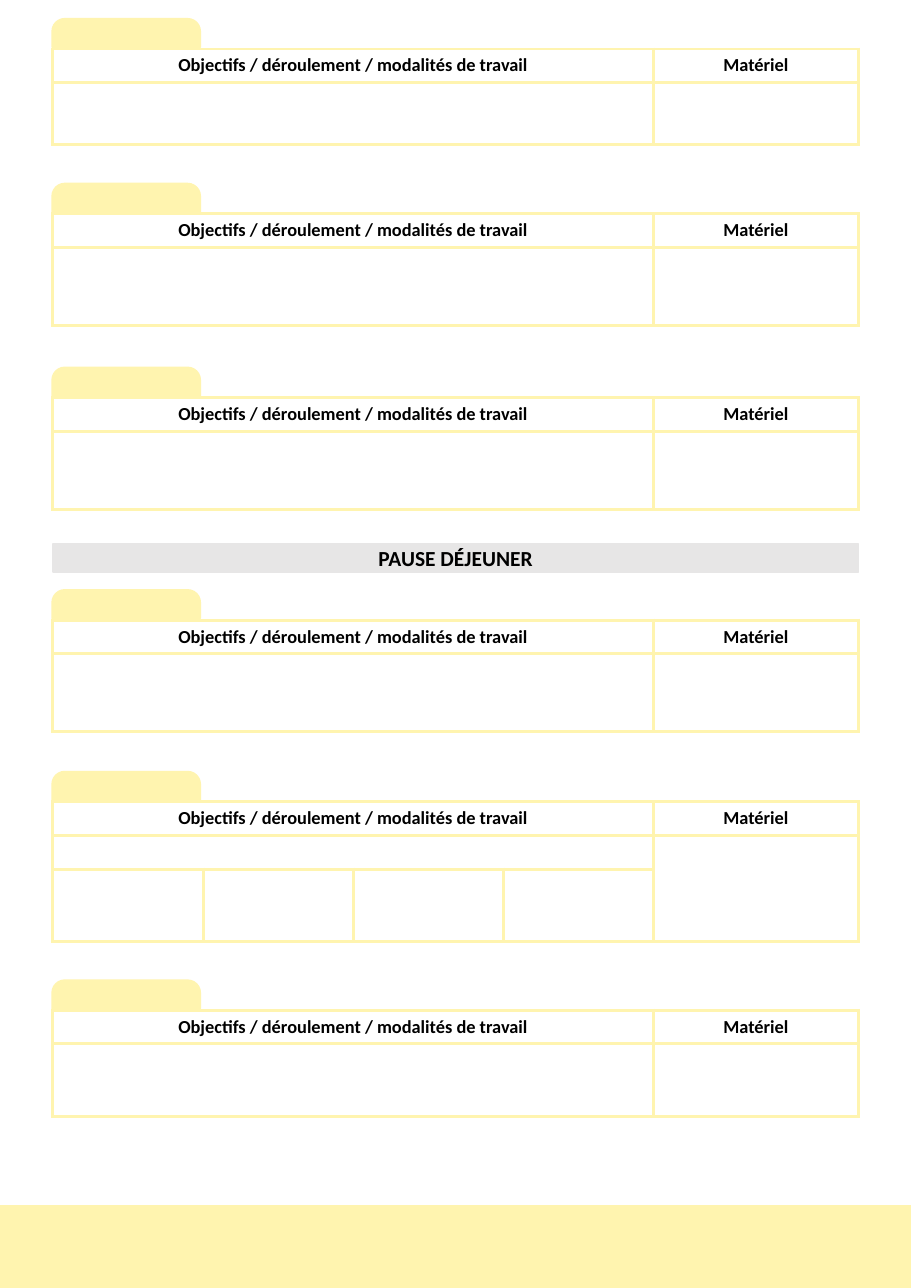
from lxml import etree
from pptx import Presentation
from pptx import util as u
from pptx.dml.color import RGBColor
from pptx.enum import shapes, text
from pptx.oxml.ns import qn

YELLOW, GREY, WHITE, BLACK = "FFF4AF", "E7E6E6", "FFFFFF", "000000"
LEFT, WIDE, SIDE = 1.22, 18.57, 4.73
HEAD = 0.77
TITLES = ("Objectifs / déroulement / modalités de travail", "Matériel")

# Top of each table, heights of its body rows, number of main columns
LESSONS = [
    (1.13, [1.44], 1),
    (4.93, [1.8], 1),
    (9.17, [1.8], 1),
    (14.3, [1.8], 1),
    (18.49, [0.78, 1.67], 4),
    (23.3, [1.68], 1),
]


def color(code):
    return RGBColor.from_string(code)


def write(frame, words, size):
    """Put one centred bold line into a text frame."""
    frame.vertical_anchor = text.MSO_ANCHOR.MIDDLE
    par = frame.paragraphs[0]
    par.alignment = text.PP_ALIGN.CENTER
    run = par.add_run()
    run.text = words
    style = {"name": "Calibri", "size": u.Pt(size), "bold": True}
    for key, value in style.items():
        setattr(run.font, key, value)
    run.font.color.rgb = color(BLACK)


def block(slide, kind, box, code, width):
    """Draw a flat shape whose fill and line share one colour."""
    shape = slide.shapes.add_shape(kind, *map(u.Cm, box))
    shape.shadow.inherit = False
    shape.fill.solid()
    shape.fill.fore_color.rgb = color(code)
    shape.line.color.rgb = color(code)
    shape.line.width = u.Pt(width)
    return shape


def frame_cell(cell):
    """Give a cell a white fill, yellow borders and small empty text."""
    cell.fill.solid()
    cell.fill.fore_color.rgb = color(WHITE)
    props = cell._tc.get_or_add_tcPr()
    for spot, side in enumerate(("lnL", "lnR", "lnT", "lnB")):
        line = etree.Element(qn("a:" + side), w=str(u.Pt(2.25)))
        fill = etree.SubElement(line, qn("a:solidFill"))
        etree.SubElement(fill, qn("a:srgbClr"), val=YELLOW)
        props.insert(spot, line)
    par = cell.text_frame.paragraphs[0]._p
    etree.SubElement(par, qn("a:endParaRPr"), sz="1200")


def lesson(slide, left, top, wide, body, parts):
    """Place a tab and, below it, a table with a side column."""
    # Tab
    tab = block(slide, shapes.MSO_SHAPE.ROUND_2_SAME_RECTANGLE,
                (left, top - 0.68, 3.38, 0.64), YELLOW, 2)
    tab.adjustments[0] = 0.428

    # Grid
    rows = [HEAD] + body
    cols = [(wide - SIDE) / parts] * parts + [SIDE]
    grid = slide.shapes.add_table(
        len(rows), len(cols), *map(u.Cm, (left, top, wide, sum(rows)))).table
    grid.first_row = grid.horz_banding = False
    for row, tall in zip(grid.rows, rows):
        row.height = u.Cm(tall)
    for col, span in zip(grid.columns, cols):
        col.width = u.Cm(span)
    for cell in grid.iter_cells():
        frame_cell(cell)

    # Merged cells
    if parts > 1:
        for row in (0, 1):
            grid.cell(row, 0).merge(grid.cell(row, parts - 1))
        grid.cell(1, parts).merge(grid.cell(len(body), parts))

    # Headings
    for col, words in zip((0, parts), TITLES):
        cell = grid.cell(0, col)
        cell.vertical_anchor = text.MSO_ANCHOR.MIDDLE
        write(cell.text_frame, words, 12)


def pause(slide, box):
    """Place the lunch break bar."""
    bar = block(slide, shapes.MSO_SHAPE.RECTANGLE, box, GREY, 1)
    write(bar.text_frame, "PAUSE DÉJEUNER", 14)


def main():
    deck = Presentation()
    deck.slide_width, deck.slide_height = u.Cm(21), u.Cm(29.7)
    slide = deck.slides.add_slide(deck.slide_layouts[6])

    # Footer band
    block(slide, shapes.MSO_SHAPE.RECTANGLE,
          (0, 27.81, 21, 1.89), YELLOW, 1)

    # Day plan
    for top, body, parts in LESSONS:
        lesson(slide, LEFT, top, WIDE, body, parts)
    pause(slide, (LEFT, 12.55, WIDE, 0.64))

    deck.save("out.pptx")


if __name__ == "__main__":
    main()
